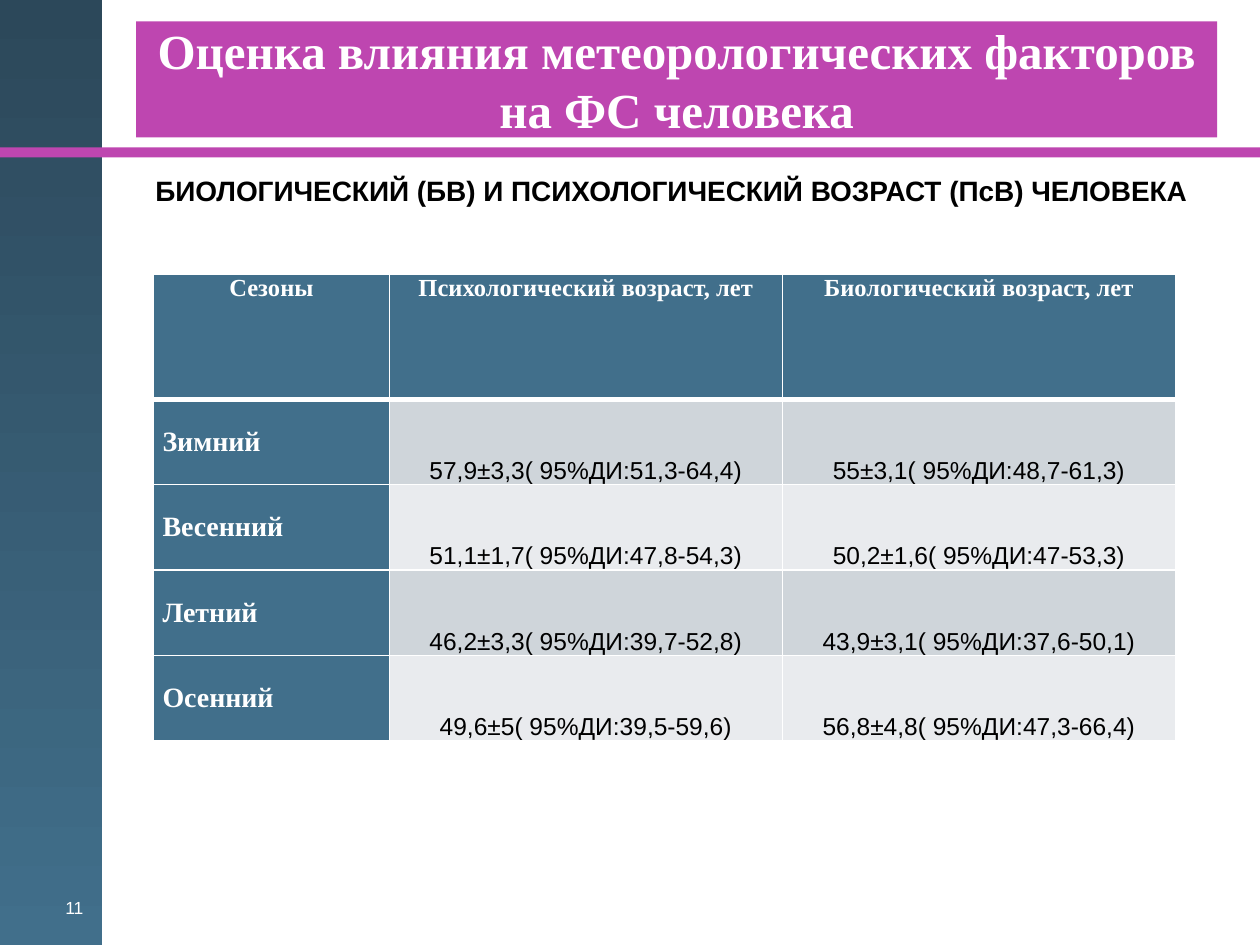
from collections import namedtuple

from lxml import etree
from pptx import Presentation
from pptx import util as u
from pptx.dml.color import RGBColor
from pptx.enum import shapes, text
from pptx.oxml import ns

# The page is a grid of 1000 columns by 750 rows, each a hundredth of an inch.
COLUMNS, ROWS = 1000, 750
CELL = u.Inches(0.01)

WHITE = RGBColor(0xFF, 0xFF, 0xFF)
BLACK = RGBColor(0, 0, 0)
MAGENTA = RGBColor(0xBE, 0x46, 0xB0)
STEEL = RGBColor(0x41, 0x6F, 0x8B)
DARK_STEEL = RGBColor(0x2C, 0x48, 0x5A)
BANDS = (RGBColor(0xCF, 0xD5, 0xDA), RGBColor(0xE9, 0xEB, 0xEE))

SERIF, SANS = "Times New Roman", "Arial"
LEFT, CENTER, RIGHT = (text.PP_ALIGN.LEFT, text.PP_ALIGN.CENTER,
                       text.PP_ALIGN.RIGHT)
TOP, MIDDLE, BOTTOM = (text.MSO_ANCHOR.TOP, text.MSO_ANCHOR.MIDDLE,
                       text.MSO_ANCHOR.BOTTOM)

Box = namedtuple("Box", "left top width height")

HEADINGS = ("Сезоны", "Психологический возраст, лет",
            "Биологический возраст, лет")
SEASONS = (
    ("Зимний", "57,9±3,3( 95%ДИ:51,3-64,4)", "55±3,1( 95%ДИ:48,7-61,3)"),
    ("Весенний", "51,1±1,7( 95%ДИ:47,8-54,3)", "50,2±1,6( 95%ДИ:47-53,3)"),
    ("Летний", "46,2±3,3( 95%ДИ:39,7-52,8)", "43,9±3,1( 95%ДИ:37,6-50,1)"),
    ("Осенний", "49,6±5( 95%ДИ:39,5-59,6)", "56,8±4,8( 95%ДИ:47,3-66,4)"),
)


def on_grid(box):
    return [round(length * CELL) for length in box]


def write(frame, words, size, font=SANS, color=BLACK, bold=False, align=LEFT):
    para = frame.paragraphs[0]
    para.alignment = align
    span = para.add_run()
    span.text = words
    span.font.size = u.Pt(size)
    span.font.name = font
    span.font.color.rgb = color
    span.font.bold = bold


def add_bar(page, box, color):
    bar = page.shapes.add_shape(shapes.MSO_SHAPE.RECTANGLE, *on_grid(box))
    bar.shadow.inherit = False
    bar.fill.solid()
    bar.fill.fore_color.rgb = color
    bar.line.fill.background()
    return bar


def add_label(page, box, words, **style):
    label = page.shapes.add_textbox(*on_grid(box))
    label.text_frame.word_wrap = True
    write(label.text_frame, words, **style)


def add_side_panel(page, box, number):
    panel = add_bar(page, box, STEEL)
    panel.fill.gradient()
    panel.fill.gradient_angle = 270
    for stop, color, position in zip(panel.fill.gradient_stops,
                                     (DARK_STEEL, STEEL), (0, 1)):
        stop.color.rgb = color
        stop.position = position
    number_box = Box(box.left + 9, box.top + box.height - 43,
                     box.width - 14, 35)
    add_label(page, number_box, number, size=10, color=WHITE, align=RIGHT)


def add_title(page, box, words):
    frame = add_bar(page, box, MAGENTA).text_frame
    frame.word_wrap = True
    frame.vertical_anchor = MIDDLE
    write(frame, words, size=28, font=SERIF, color=WHITE, bold=True,
          align=CENTER)


def set_borders(cell, **widths):
    """Draw white borders; the widths are points keyed by edge: L, R, T, B."""
    properties = cell._tc.get_or_add_tcPr()
    for index, (edge, width) in enumerate(widths.items()):
        line = etree.Element(ns.qn(f"a:ln{edge}"), w=str(int(u.Pt(width))))
        fill = etree.SubElement(line, ns.qn("a:solidFill"))
        etree.SubElement(fill, ns.qn("a:srgbClr"), val=str(WHITE))
        properties.insert(index, line)


def fill_cell(cell, words, background, anchor, **style):
    cell.margin_left = cell.margin_right = 7 * CELL
    cell.margin_top = cell.margin_bottom = 0
    cell.vertical_anchor = anchor
    cell.fill.solid()
    cell.fill.fore_color.rgb = background
    write(cell.text_frame, words, **style)


def add_season_table(page, box):
    frame = page.shapes.add_table(len(SEASONS) + 1, len(HEADINGS),
                                  *on_grid(box))
    table = frame.table
    first_column, header_height = 187, 99
    value_column = (box.width - first_column) / (len(HEADINGS) - 1)
    season_height = (box.height - header_height) / len(SEASONS)
    for index, column in enumerate(table.columns):
        column.width = round((value_column if index else first_column) * CELL)
    for index, row in enumerate(table.rows):
        row.height = round((season_height if index else header_height) * CELL)

    heading = dict(font=SERIF, color=WHITE, bold=True)
    for r, values in enumerate((HEADINGS,) + SEASONS):
        for c, words in enumerate(values):
            cell = table.cell(r, c)
            if r == 0:
                style = dict(heading, size=14, align=CENTER)
                background, anchor = STEEL, TOP
            elif c == 0:
                style = dict(heading, size=16)
                background, anchor = STEEL, MIDDLE
            else:
                style = dict(size=14, align=CENTER)
                background, anchor = BANDS[(r - 1) % 2], BOTTOM
            fill_cell(cell, words, background, anchor, **style)
            set_borders(cell, L=1, R=1, T=3 if r == 1 else 1,
                        B=3 if r == 0 else 1)


def build_slide(deck):
    page = deck.slides.add_slide(deck.slide_layouts[6])
    add_side_panel(page, Box(0, 0, 81, ROWS), "11")
    add_bar(page, Box(0, 117, COLUMNS, 8), MAGENTA)
    add_title(page, Box(108, 17, 858, 92),
              "Оценка влияния метеорологических факторов на ФС человека")
    add_label(page, Box(100, 133, 866, 558),
              "БИОЛОГИЧЕСКИЙ (БВ) И ПСИХОЛОГИЧЕСКИЙ ВОЗРАСТ (ПсВ) ЧЕЛОВЕКА",
              size=16, bold=True, align=CENTER)
    add_season_table(page, Box(122, 218, 811, 370))


def main():
    deck = Presentation()
    deck.slide_width = COLUMNS * CELL
    deck.slide_height = ROWS * CELL
    build_slide(deck)
    deck.save("out.pptx")


if __name__ == "__main__":
    main()
